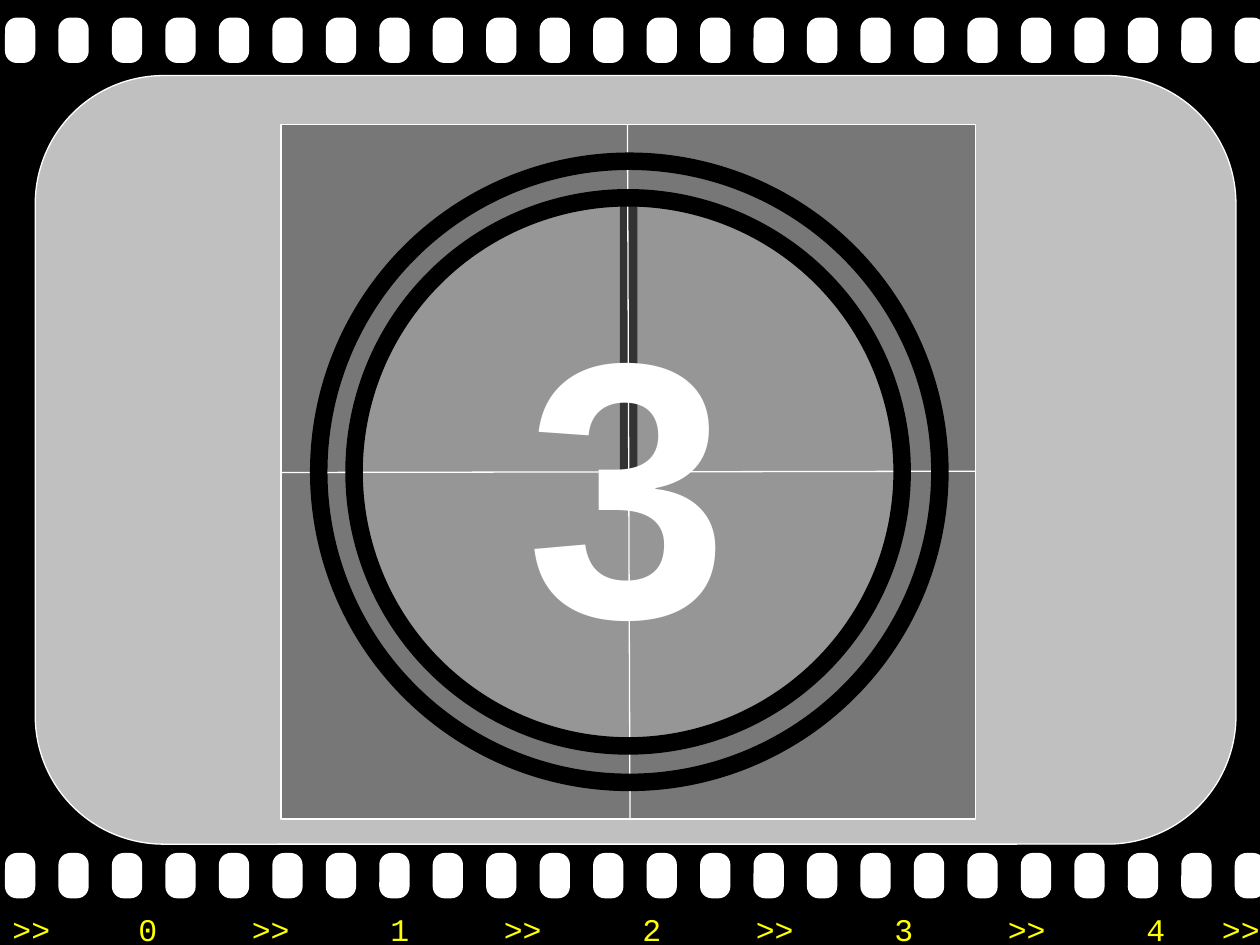
import pptx
import pptx.util
import pptx.dml.color
import pptx.enum.shapes
import pptx.enum.text
import pptx.oxml.ns
import lxml.etree

Inches = pptx.util.Inches
Pt = pptx.util.Pt
RGBColor = pptx.dml.color.RGBColor
Kind = pptx.enum.shapes.MSO_SHAPE
Align = pptx.enum.text.PP_ALIGN
Anchor = pptx.enum.text.MSO_ANCHOR
qn = pptx.oxml.ns.qn

BLACK = RGBColor(0x00, 0x00, 0x00)
WHITE = RGBColor(0xFF, 0xFF, 0xFF)
SILVER = RGBColor(0xC0, 0xC0, 0xC0)
GREY = RGBColor(0x77, 0x77, 0x77)
DIAL = RGBColor(0x96, 0x96, 0x96)
DARK = RGBColor(0x33, 0x33, 0x33)
YELLOW = RGBColor(0xFF, 0xFF, 0x00)


class Film:
    thin = 0.75
    thick = 10
    mono = "Courier New"
    sans = "Arial"

    def __init__(self, slide):
        self.slide = slide
        fill = slide.background.fill
        fill.solid()
        fill.fore_color.rgb = BLACK

    def group(self):
        return self.slide.shapes.add_group_shape()

    def shape(self, kind, box, fill=None, line=None, width=thin, round=None, host=None):
        item = (host or self.slide).shapes.add_shape(kind, *map(Inches, box))
        item.shadow.inherit = False
        if round is not None:
            item.adjustments[0] = round
        if fill is None:
            item.fill.background()
        else:
            item.fill.solid()
            item.fill.fore_color.rgb = fill
        if line is None:
            item.line.fill.background()
        else:
            item.line.color.rgb = line
            item.line.width = Pt(width)
        return item

    def line(self, start, end):
        item = self.slide.shapes.add_connector(
            pptx.enum.shapes.MSO_CONNECTOR.STRAIGHT, *map(Inches, start + end))
        item.line.color.rgb = WHITE
        item.line.width = Pt(self.thin)
        lxml.etree.SubElement(item._element.spPr, qn("a:effectLst"))

    def run(self, para, text, size, font, color, bold=False):
        run = para.add_run()
        run.text = text
        run.font.size = Pt(size)
        run.font.name = font
        run.font.bold = bold
        run.font.color.rgb = color

    def holes(self, top, count=24):
        strip = self.group()
        step = 9.76 / (count - 1)
        for i in range(count):
            self.shape(Kind.ROUNDED_RECTANGLE, (0.04 + i * step, top, 0.24, 0.36),
                       WHITE, round=0.39, host=strip)

    def marks(self, box, marks, stops):
        frame = self.slide.shapes.add_textbox(*map(Inches, box)).text_frame
        frame.word_wrap = False
        para = frame.paragraphs[0]
        tabs = lxml.etree.SubElement(para._p.get_or_add_pPr(), qn("a:tabLst"))
        for stop in stops:
            lxml.etree.SubElement(tabs, qn("a:tab"), pos=str(Inches(stop)), algn="l")
        self.run(para, "\t".join(marks), 18, self.mono, YELLOW)

    def count(self, item, text):
        frame = item.text_frame
        frame.word_wrap = False
        frame.vertical_anchor = Anchor.MIDDLE
        para = frame.paragraphs[0]
        para.alignment = Align.CENTER
        self.run(para, text, 208, self.sans, WHITE, True)


def main():
    deck = pptx.Presentation()
    deck.slide_width = Inches(10)
    deck.slide_height = Inches(7.5)
    film = Film(deck.slides.add_slide(deck.slide_layouts[6]))

    film.shape(Kind.ROUNDED_RECTANGLE, (0.28, 0.6, 9.53, 6.1), SILVER, WHITE, round=0.167)
    for top in (6.77, 0.14):
        film.holes(top)

    marks, stops = [">>"], []
    for i in range(5):
        marks += [str(i), ">>"]
        stops += [2 * i + 1, 2 * i + 1.9]
    stops[-1] = 9.6
    film.marks((0, 7.17, 10.2, 0.4), marks, stops)

    film.shape(Kind.RECTANGLE, (2.23, 0.99, 5.51, 5.51), GREY, WHITE)
    dial = film.group()
    film.shape(Kind.OVAL, (2.83, 1.57, 4.32, 4.35), DIAL, WHITE, host=dial)
    film.shape(Kind.RECTANGLE, (4.92, 1.58, 0.14, 2.16), DARK, host=dial)
    film.line((4.98, 0.99), (5, 6.51))
    film.line((7.74, 3.74), (2.23, 3.75))

    ring = film.shape(Kind.OVAL, (2.81, 1.57, 4.35, 4.35), line=BLACK, width=film.thick)
    film.count(ring, "3")
    film.shape(Kind.OVAL, (2.53, 1.28, 4.93, 4.93), line=BLACK, width=film.thick)

    deck.save("out.pptx")


if __name__ == "__main__":
    main()
